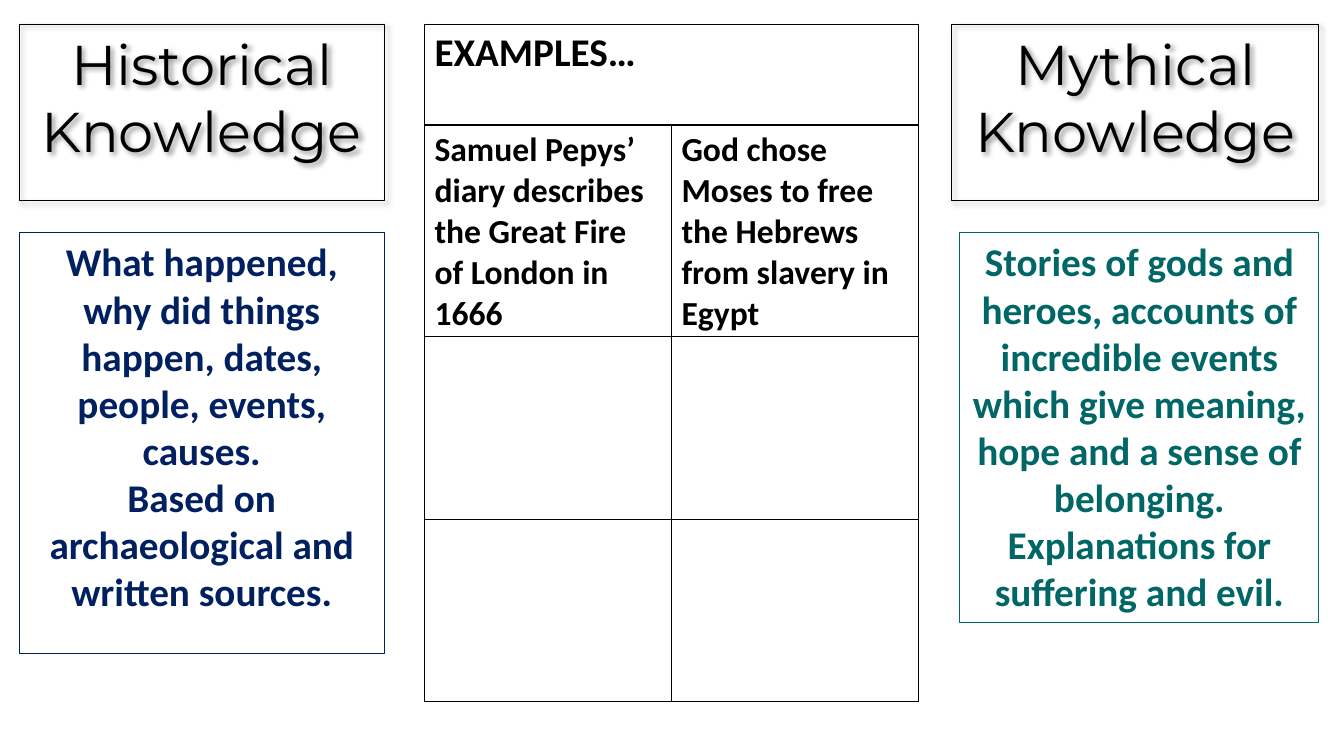
from pptx import Presentation
from pptx.dml.color import RGBColor as Rgb
from pptx.enum.text import MSO_ANCHOR as Anchor, PP_ALIGN as Align
from pptx.oxml import parse_xml
from pptx.oxml.ns import nsdecls
from pptx.util import Inches, Pt

BLACK, NAVY, TEAL = "000000", "002060", "006666"


def tint(code):
    return Rgb.from_string(code)


class Sheet:
    head = dict(name="Montserrat", size=Pt(40), bold=False)
    body = dict(name="Calibri", size=Pt(28), bold=True)
    cell = dict(name="Calibri", size=Pt(24), bold=True)
    frame = dict(word_wrap=True, vertical_anchor=Anchor.TOP)
    plain = dict(first_row=False, horz_banding=False)

    def __init__(self, deck):
        self.slide = deck.slides.add_slide(deck.slide_layouts[6])

    def style(self, item, values):
        for key, value in values.items():
            setattr(item, key, value)

    def label(self, frame, lines, font, color, align):
        frame.text = "\n".join(lines)
        for para in frame.paragraphs:
            para.alignment = align
            for run in para.runs:
                self.style(run.font, font)
                run.font.color.rgb = tint(color)

    def box(self, spot, lines, font, color):
        box = self.slide.shapes.add_textbox(*map(Inches, spot))
        box.line.color.rgb = tint(color)
        box.line.width = Pt(0.75)
        self.style(box.text_frame, self.frame)
        self.label(box.text_frame, lines, font, color, Align.CENTER)
        return box

    def title(self, spot, lines):
        box = self.box(spot, lines, self.head, BLACK)
        box.element.spPr.append(parse_xml(
            f'<a:effectLst {nsdecls("a")}><a:outerShdw blurRad="{Pt(4)}" '
            f'dist="{Pt(3)}" dir="2700000" algn="tl" rotWithShape="0">'
            f'<a:srgbClr val="{BLACK}"><a:alpha val="40000"/></a:srgbClr>'
            '</a:outerShdw></a:effectLst>'))

    def edge(self, cell):
        cell.fill.background()
        props = cell._tc.get_or_add_tcPr()
        for spot, side in enumerate("LRTB"):
            props.insert(spot, parse_xml(
                f'<a:ln{side} {nsdecls("a")} w="{Pt(1)}"><a:solidFill>'
                f'<a:srgbClr val="{BLACK}"/></a:solidFill></a:ln{side}>'))

    def table(self, spot, widths, heights, top, pair):
        grid = self.slide.shapes.add_table(
            len(heights), len(widths), *map(Inches, spot)).table
        self.style(grid, self.plain)
        for col, width in zip(grid.columns, widths):
            col.width = Inches(width)
        for row, height in zip(grid.rows, heights):
            row.height = Inches(height)
        for cell in grid.iter_cells():
            self.edge(cell)
        grid.cell(0, 0).merge(grid.cell(0, len(widths) - 1))
        self.label(grid.cell(0, 0).text_frame, [top], self.body, BLACK, Align.LEFT)
        for col, text in enumerate(pair):
            self.label(grid.cell(1, col).text_frame, [text], self.cell,
                       BLACK, Align.LEFT)


def main():
    deck = Presentation()
    deck.slide_width, deck.slide_height = Inches(13.33), Inches(7.5)
    sheet = Sheet(deck)
    sheet.title((0.19, 0.24, 3.62, 1.75), ["Historical Knowledge"])
    sheet.title((9.44, 0.24, 3.64, 1.75), ["Mythical", "Knowledge"])
    sheet.box((9.52, 2.31, 3.56, 3.87), [
        "Stories of gods and heroes, accounts of incredible events which give "
        "meaning, hope and a sense of belonging. Explanations for suffering "
        "and evil."], sheet.body, TEAL)
    sheet.box((0.19, 2.31, 3.62, 4.17), [
        "What happened, why did things happen, dates, people, events, causes.",
        "Based on archaeological and written sources."], sheet.body, NAVY)
    sheet.table((4.21, 0.24, 4.91, 6.43), [2.45] * 2, [1] + [1.81] * 3,
                "EXAMPLES…",
                ["Samuel Pepys’ diary describes the Great Fire of London in 1666",
                 "God chose Moses to free the Hebrews from slavery in Egypt"])
    deck.save("out.pptx")


if __name__ == "__main__":
    main()
